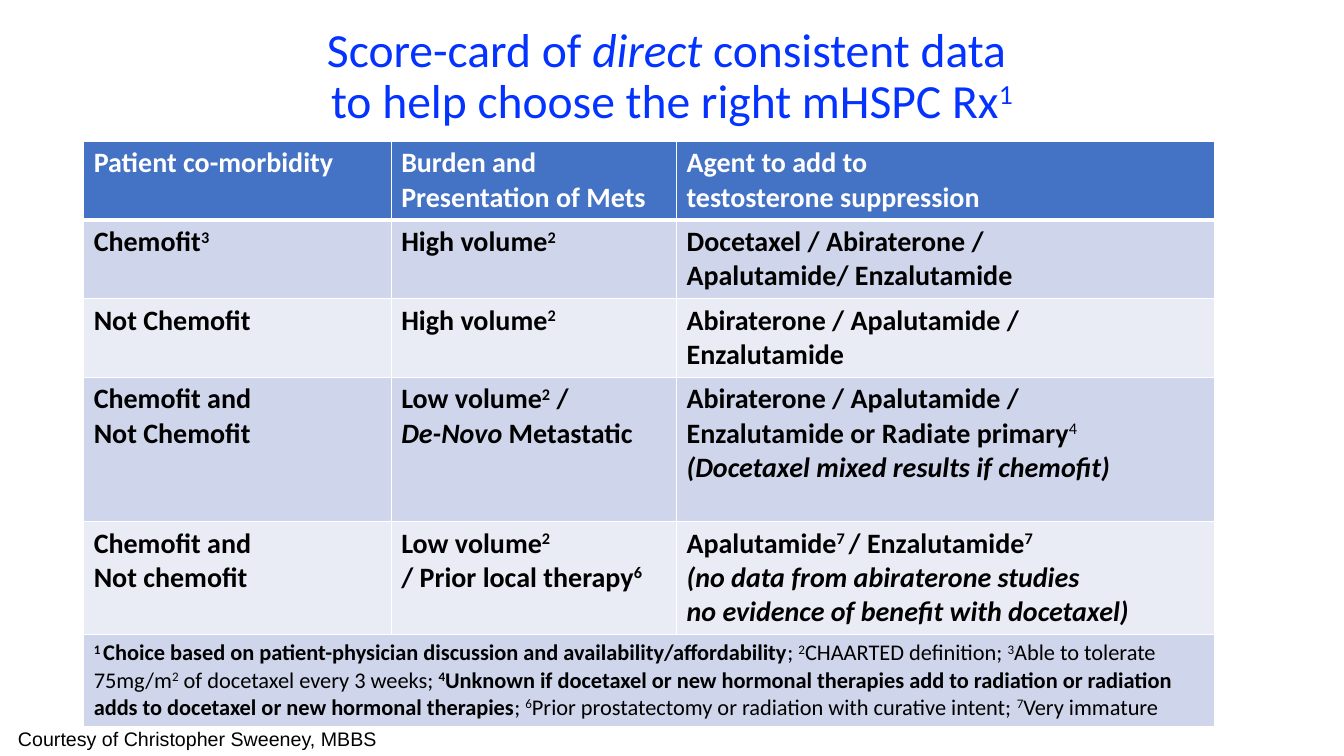
from lxml import etree
from pptx import Presentation
from pptx.dml.color import RGBColor
from pptx.enum.text import MSO_ANCHOR, MSO_AUTO_SIZE, PP_ALIGN
from pptx.oxml.ns import qn
from pptx.util import Inches, Pt

CENTER = PP_ALIGN.CENTER
MIDDLE = MSO_ANCHOR.MIDDLE
NO_AUTOFIT = MSO_AUTO_SIZE.NONE
GROW = MSO_AUTO_SIZE.SHAPE_TO_FIT_TEXT

COLORS = {
    "title": "0432FF",
    "header": "4472C4",
    "band_dark": "CFD5EA",
    "band_light": "E9EBF5",
    "white": "FFFFFF",
    "black": "000000",
}
FORMATS = {
    "title": {"name": "Calibri", "size": Pt(34), "bold": False},
    "cell": {"name": "Calibri", "size": Pt(20), "bold": True},
    "footnote": {"name": "Calibri", "size": Pt(16), "bold": False},
    "credit": {"name": "Arial", "size": Pt(14), "bold": False},
}
MARKS = {"*": "bold", "_": "italic", "^": "superscript"}

COLUMN_WIDTHS = [3.05, 2.83, 5.34]
ROW_HEIGHTS = [0.78, 0.76, 0.76, 1.43, 1.1, 0.9]
TITLE = "Score-card of _direct_ consistent data \vto help choose the right mHSPC Rx^1^"
SCORE_CARD = [
    ["Patient co-morbidity", "Burden and Presentation of Mets",
     "Agent to add to\ntestosterone suppression"],
    ["Chemofit^3^", "High volume^2^",
     "Docetaxel / Abiraterone /\nApalutamide/ Enzalutamide"],
    ["Not Chemofit", "High volume^2^",
     "Abiraterone / Apalutamide /\nEnzalutamide"],
    ["Chemofit and\nNot Chemofit", "Low volume^2^ /\n_De-Novo_ Metastatic",
     "Abiraterone / Apalutamide /\nEnzalutamide or Radiate primary*^4^*\n"
     "_(Docetaxel mixed results if chemofit)_"],
    ["Chemofit and\nNot chemofit", "Low volume^2^\n/ Prior local therapy^6^",
     "Apalutamide^7 ^/ Enzalutamide^7^\n_(no data from abiraterone studies_\n"
     "_no evidence of benefit with docetaxel)_"],
]
FOOTNOTE = (
    "*^1 ^Choice based on patient-physician discussion and availability/affordability*; "
    "^2^CHAARTED definition; ^3^Able to tolerate 75mg/m^2^ of docetaxel every 3 weeks; "
    "*^4^Unknown if docetaxel or new hormonal therapies add to radiation or radiation "
    "adds to docetaxel or new hormonal therapies*; ^6^Prior prostatectomy or radiation "
    "with curative intent; ^7^Very immature"
)
CREDIT = "Courtesy of Christopher Sweeney, MBBS"


def split_marks(text):
    """Yield each piece of text with the set of marks that are switched on."""
    active, piece = set(), ""
    for character in text:
        if character in MARKS:
            if piece:
                yield piece, set(active)
            active ^= {MARKS[character]}
            piece = ""
        else:
            piece += character
    if piece:
        yield piece, active


class ScoreCardSlide:
    """Hold the style and the current slide, and add elements to it."""

    def __init__(self, presentation):
        self.slide = presentation.slides.add_slide(presentation.slide_layouts[5])

    def fill_text(self, frame, text, style, color, **paragraph_format):
        """Fill a text frame with marked text, one paragraph per line."""
        for index, line in enumerate(text.split("\n")):
            paragraph = frame.paragraphs[0] if index == 0 else frame.add_paragraph()
            for name, value in paragraph_format.items():
                setattr(paragraph, name, value)
            for piece, marks in split_marks(line):
                for part_index, part in enumerate(piece.split("\v")):
                    if part_index:
                        paragraph.add_line_break()
                    self.add_run(paragraph, part, marks, style, color)

    def add_run(self, paragraph, text, marks, style, color):
        """Add one formatted run to a paragraph."""
        run = paragraph.add_run()
        run.text = text
        values = dict(FORMATS[style], italic="italic" in marks)
        values["bold"] ^= "bold" in marks
        for name, value in values.items():
            setattr(run.font, name, value)
        run.font.color.rgb = RGBColor.from_string(COLORS[color])
        if "superscript" in marks:
            run.font._element.set("baseline", "30000")

    def add_title(self, text, left, top, width, height):
        """Place and fill the title placeholder."""
        title = self.slide.shapes.title
        box = {"left": left, "top": top, "width": width, "height": height}
        for name, value in box.items():
            setattr(title, name, Inches(value))
        frame = title.text_frame
        frame.auto_size = NO_AUTOFIT
        frame.vertical_anchor = MIDDLE
        self.fill_text(frame, text, "title", "title", alignment=CENTER, line_spacing=0.9)

    def style_cell(self, cell, fill, bottom_width):
        """Give a cell its fill and white borders."""
        cell.fill.solid()
        cell.fill.fore_color.rgb = RGBColor.from_string(COLORS[fill])
        properties = cell._tc.get_or_add_tcPr()
        widths = {"lnL": 1, "lnR": 1, "lnT": 1, "lnB": bottom_width}
        for index, (side, width) in enumerate(widths.items()):
            line = etree.Element(qn("a:" + side), w=str(Pt(width)))
            solid = etree.SubElement(line, qn("a:solidFill"))
            etree.SubElement(solid, qn("a:srgbClr"), val=COLORS["white"])
            properties.insert(index, line)

    def add_table(self, rows, footnote, left, top):
        """Add the score-card table with a merged footnote row."""
        table = self.slide.shapes.add_table(
            len(ROW_HEIGHTS), len(COLUMN_WIDTHS), Inches(left), Inches(top),
            Inches(sum(COLUMN_WIDTHS)), Inches(sum(ROW_HEIGHTS))).table
        for column, width in zip(table.columns, COLUMN_WIDTHS):
            column.width = Inches(width)
        for row_index, height in enumerate(ROW_HEIGHTS):
            table.rows[row_index].height = Inches(height)
            band = "band_dark" if row_index % 2 else "band_light"
            fill = band if row_index else "header"
            for cell in table.rows[row_index].cells:
                self.style_cell(cell, fill, 1 if row_index else 3)
        for row_index, texts in enumerate(rows):
            color = "black" if row_index else "white"
            for column_index, text in enumerate(texts):
                cell = table.cell(row_index, column_index)
                self.fill_text(cell.text_frame, text, "cell", color)
        last = len(rows)
        cell = table.cell(last, 0)
        cell.merge(table.cell(last, len(COLUMN_WIDTHS) - 1))
        self.fill_text(cell.text_frame, footnote, "footnote", "black")

    def add_credit(self, text, left, top, width, height):
        """Add the credit line as a text box."""
        shape = self.slide.shapes.add_textbox(
            Inches(left), Inches(top), Inches(width), Inches(height))
        shape.text_frame.word_wrap = False
        shape.text_frame.auto_size = GROW
        self.fill_text(shape.text_frame, text, "credit", "black")


def main():
    """Build the slide and save the presentation."""
    presentation = Presentation()
    presentation.slide_width = Inches(13.33)
    presentation.slide_height = Inches(7.5)
    score_card = ScoreCardSlide(presentation)
    score_card.add_title(TITLE, 0, 0.14, 13.33, 1.26)
    score_card.add_table(SCORE_CARD, FOOTNOTE, 0.83, 1.4)
    score_card.add_credit(CREDIT, 0.08, 7.16, 3.78, 0.34)
    presentation.save("out.pptx")


if __name__ == "__main__":
    main()
